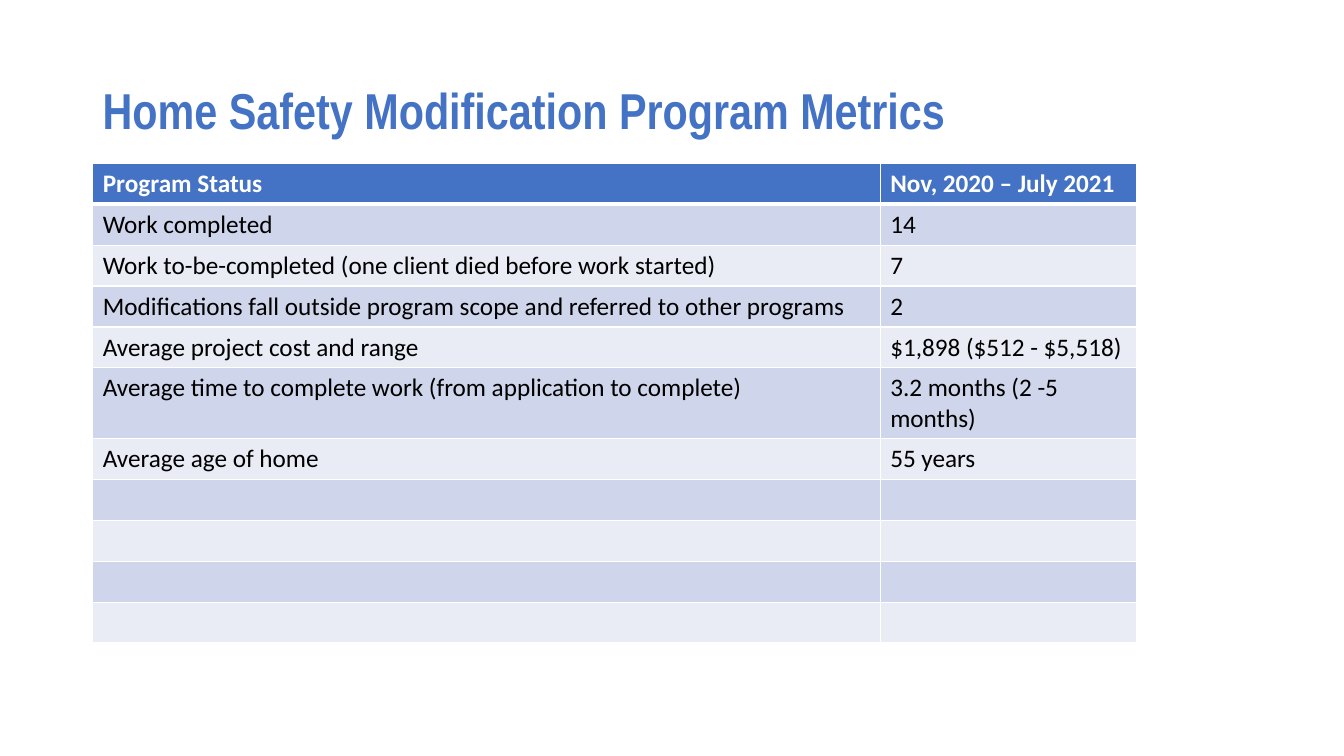
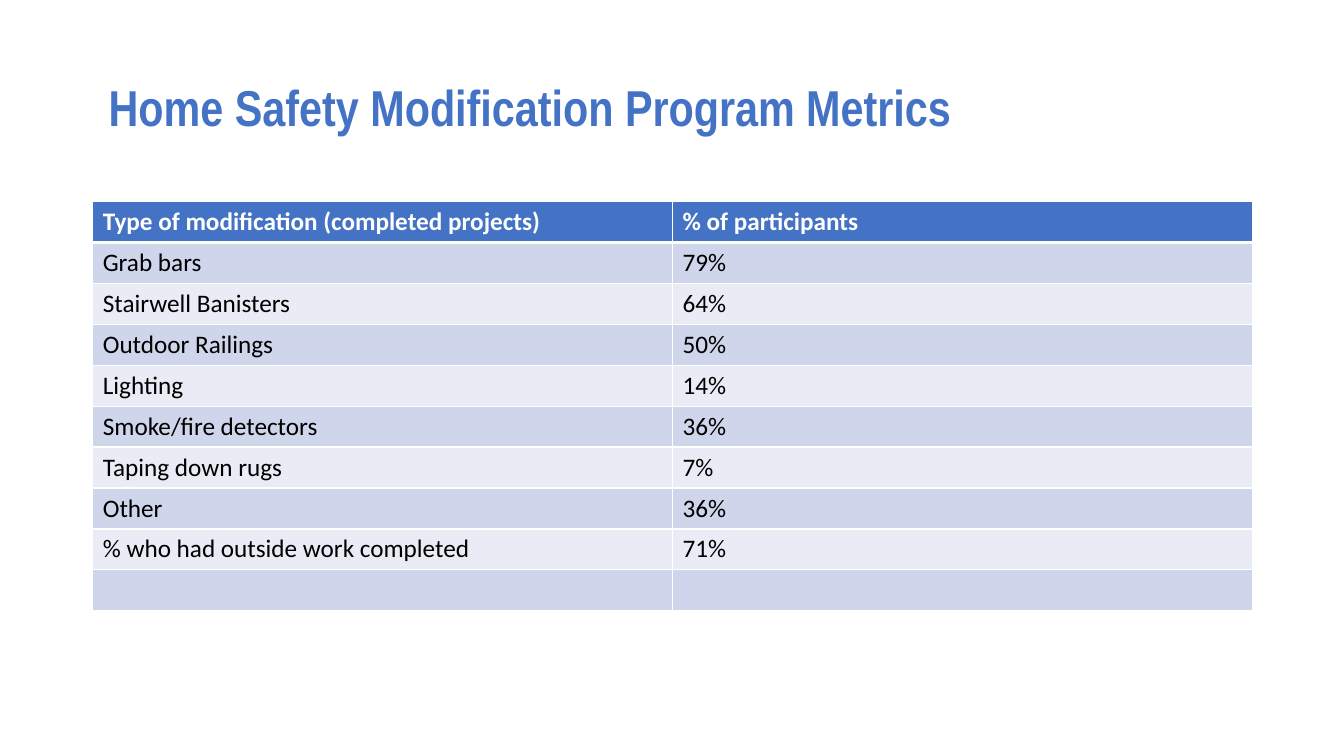
from dataclasses import dataclass

from lxml.etree import SubElement
from pptx import Presentation
from pptx.dml.color import RGBColor
from pptx.enum.text import MSO_ANCHOR
from pptx.oxml.ns import qn
from pptx.util import Inches, Pt

BLUE, WHITE, BLACK = "4472C4", "FFFFFF", "000000"
BANDS = ("CFD5EA", "E9EBF5")
TITLE = "Home Safety Modification Program Metrics"
TITLE_HEIGHT = 1.45
TABLE_LEFT = 0.92
ROW_HEIGHT = Inches(4.06) // 10
THIN, THICK = 1, 3


@dataclass
class MetricsSlide:
    """Positions in inches; blank_rows are the empty rows below the data."""
    title_at: tuple[float, float]
    title_width: float
    table_top: float
    col_widths: tuple[float, float]
    rows: list[tuple[str, str]]
    blank_rows: int


SLIDES = [
    MetricsSlide(
        title_at=(0.92, 0.4), title_width=12.41, table_top=1.62,
        col_widths=(7.81, 2.54), blank_rows=4,
        rows=[
            ("Program Status", "Nov, 2020 – July 2021"),
            ("Work completed", "14"),
            ("Work to-be-completed (one client died before work started)", "7"),
            ("Modifications fall outside program scope and referred to other programs", "2"),
            ("Average project cost and range", "$1,898 ($512 - $5,518)"),
            ("Average time to complete work (from application to complete)",
             "3.2 months (2 -5 months)"),
            ("Average age of home", "55 years"),
        ]),
    MetricsSlide(
        title_at=(0.98, 0.37), title_width=11.5, table_top=2,
        col_widths=(5.75, 5.75), blank_rows=1,
        rows=[
            ("Type of modification (completed projects)", "% of participants"),
            ("Grab bars", "79%"),
            ("Stairwell Banisters", "64%"),
            ("Outdoor Railings", "50%"),
            ("Lighting", "14%"),
            ("Smoke/fire detectors", "36%"),
            ("Taping down rugs", "7%"),
            ("Other", "36%"),
            ("% who had outside work completed", "71%"),
        ]),
]


def rgb(color: str) -> RGBColor:
    return RGBColor.from_string(color)


def write(tf, text: str, *, font: str = "Calibri", size: float = 18,
          color: str = BLACK, bold: bool = False, spacing: float = 1.0) -> None:
    p = tf.paragraphs[0]
    p.line_spacing = spacing
    r = p.add_run()
    r.text = text
    r.font.name, r.font.size, r.font.bold = font, Pt(size), bold
    r.font.color.rgb = rgb(color)


def add_title(s, spec: MetricsSlide) -> None:
    left, top = spec.title_at
    box = s.shapes.add_textbox(Inches(left), Inches(top),
                               Inches(spec.title_width), Inches(TITLE_HEIGHT))
    tf = box.text_frame
    tf.word_wrap = True
    tf.vertical_anchor = MSO_ANCHOR.MIDDLE
    write(tf, TITLE, font="Arial Narrow", size=36, color=BLUE, bold=True, spacing=0.9)


def set_borders(cell, top: float, bottom: float) -> None:
    """Draw white borders; call before the fill, which must follow them in the XML."""
    tc_pr = cell._tc.get_or_add_tcPr()
    for side, width in (("L", THIN), ("R", THIN), ("T", top), ("B", bottom)):
        ln = SubElement(tc_pr, qn(f"a:ln{side}"), w=str(Pt(width)))
        SubElement(SubElement(ln, qn("a:solidFill")), qn("a:srgbClr"), val=WHITE)


def add_metrics_table(s, spec: MetricsSlide) -> None:
    rows = spec.rows + [("", "")] * spec.blank_rows
    frame = s.shapes.add_table(len(rows), len(spec.col_widths),
                               Inches(TABLE_LEFT), Inches(spec.table_top),
                               Inches(sum(spec.col_widths)), ROW_HEIGHT * len(rows))
    table = frame.table
    for column, width in zip(table.columns, spec.col_widths):
        column.width = Inches(width)
    for i, texts in enumerate(rows):
        table.rows[i].height = ROW_HEIGHT
        header = i == 0
        for j, text in enumerate(texts):
            cell = table.cell(i, j)
            set_borders(cell, top=THICK if i == 1 else THIN,
                        bottom=THICK if header else THIN)
            cell.fill.solid()
            cell.fill.fore_color.rgb = rgb(BLUE if header else BANDS[(i - 1) % 2])
            if text:
                write(cell.text_frame, text, color=WHITE if header else BLACK, bold=header)


def main() -> None:
    prs = Presentation()
    prs.slide_width, prs.slide_height = Inches(13.33), Inches(7.5)
    for spec in SLIDES:
        s = prs.slides.add_slide(prs.slide_layouts[6])
        add_title(s, spec)
        add_metrics_table(s, spec)
    prs.save("out.pptx")


if __name__ == "__main__":
    main()
